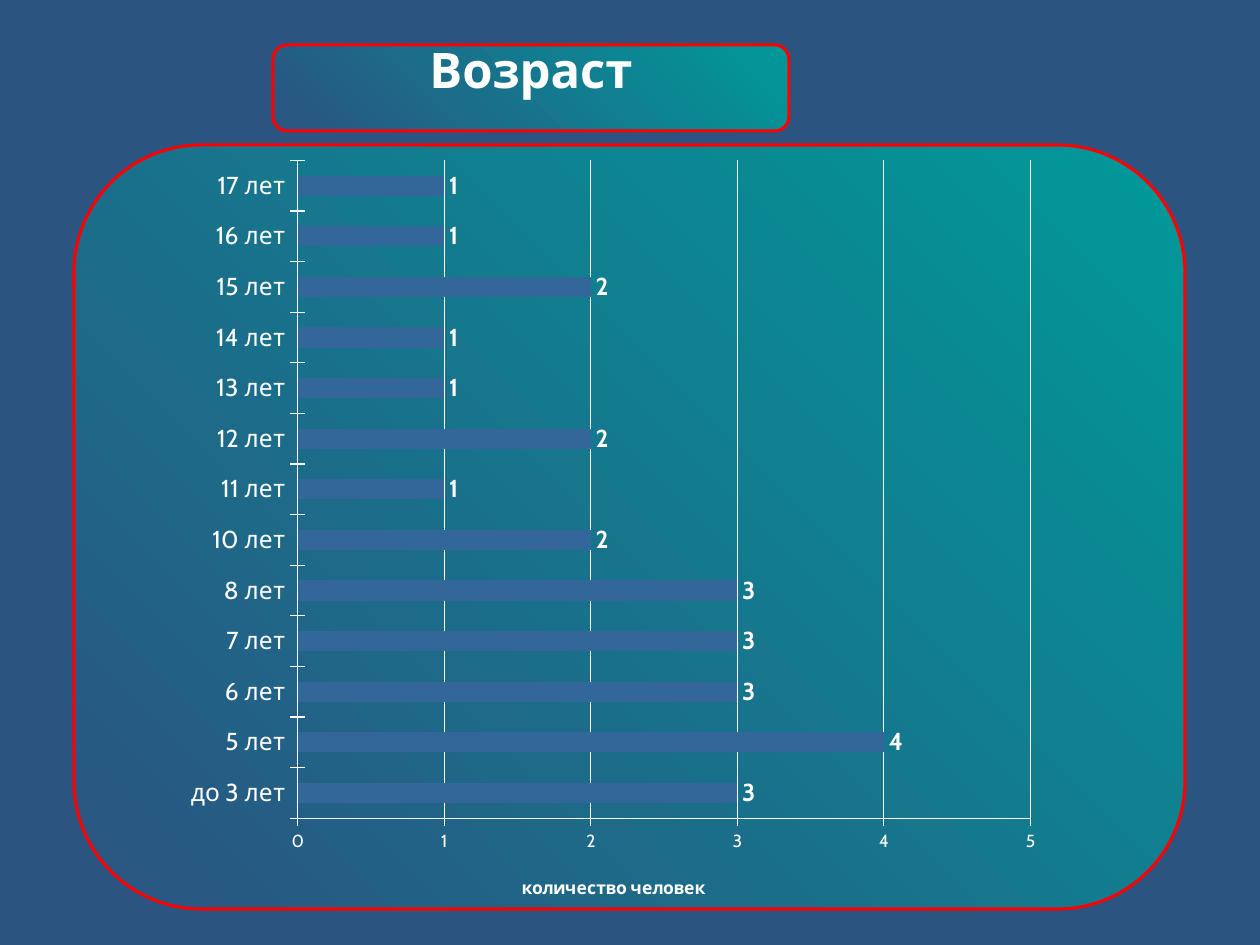
from dataclasses import dataclass

from pptx import Presentation
from pptx.chart.data import CategoryChartData
from pptx.dml.color import RGBColor
from pptx.enum.chart import XL_CHART_TYPE, XL_LABEL_POSITION, XL_TICK_MARK
from pptx.enum.shapes import MSO_SHAPE
from pptx.enum.text import MSO_ANCHOR, PP_ALIGN
from pptx.oxml import parse_xml
from pptx.oxml.ns import nsdecls, qn
from pptx.util import Pt

BAR_CLUSTERED = XL_CHART_TYPE.BAR_CLUSTERED
OUTSIDE_END = XL_LABEL_POSITION.OUTSIDE_END
CROSS = XL_TICK_MARK.CROSS
NO_TICK = XL_TICK_MARK.NONE
ROUNDED = MSO_SHAPE.ROUNDED_RECTANGLE
MIDDLE = MSO_ANCHOR.MIDDLE
CENTER = PP_ALIGN.CENTER

EMU_PER_PX = 914400 / 126


@dataclass(frozen=True)
class Theme:
    navy: str = "2B5481"
    teal: str = "009999"
    bar: str = "336699"
    outline: str = "FF0000"
    white: str = "FFFFFF"
    font: str = "Cabin"
    heading_size: int = 28
    label_size: int = 14
    axis_size: int = 10
    outline_width: float = 1.75
    axis_width: float = 0.75


THEME = Theme()

AGE_COUNTS = {
    "до 3 лет": 3,
    "5 лет": 4,
    "6 лет": 3,
    "7 лет": 3,
    "8 лет": 3,
    "10 лет": 2,
    "11 лет": 1,
    "12 лет": 2,
    "13 лет": 1,
    "14 лет": 1,
    "15 лет": 2,
    "16 лет": 1,
    "17 лет": 1,
}


def px(length):
    return round(length * EMU_PER_PX)


def rgb(value):
    return RGBColor.from_string(value)


def style_font(font, size, bold=False, color=THEME.white):
    font.name = THEME.font
    font.size = Pt(size)
    font.bold = bold
    font.color.rgb = rgb(color)


def write_text(frame, text, size, bold=False, align=CENTER):
    paragraph = frame.paragraphs[0]
    paragraph.alignment = align
    run = paragraph.add_run()
    run.text = text
    style_font(run.font, size, bold)


def add_panel(slide, left, top, width, height):
    panel = slide.shapes.add_shape(ROUNDED, px(left), px(top), px(width), px(height))
    panel.shadow.inherit = False
    panel.fill.gradient()
    panel.fill.gradient_angle = 45
    for stop, color, position in zip(
        panel.fill.gradient_stops, (THEME.navy, THEME.teal), (0, 1)
    ):
        stop.color.rgb = rgb(color)
        stop.position = position
    panel.line.color.rgb = rgb(THEME.outline)
    panel.line.width = Pt(THEME.outline_width)
    return panel


def add_heading(slide, text):
    frame = add_panel(slide, 273, 45, 516, 86).text_frame
    frame.word_wrap = False
    frame.vertical_anchor = MIDDLE
    frame.margin_top = 0
    frame.margin_bottom = px(39)
    write_text(frame, text, THEME.heading_size, bold=True)


def place_part(parent, index, **fractions):
    for previous in parent.findall(qn("c:layout")):
        parent.remove(previous)
    target = '<c:layoutTarget val="inner"/>' if "w" in fractions else ""
    modes = "".join(f'<c:{key}Mode val="edge"/>' for key in ("x", "y"))
    values = "".join(f'<c:{key} val="{value}"/>' for key, value in fractions.items())
    parent.insert(
        index,
        parse_xml(
            f'<c:layout {nsdecls("c")}><c:manualLayout>'
            f"{target}{modes}{values}</c:manualLayout></c:layout>"
        ),
    )


def style_line(line):
    line.color.rgb = rgb(THEME.white)
    line.width = Pt(THEME.axis_width)


def style_axis(axis, size):
    axis.major_tick_mark = CROSS
    axis.minor_tick_mark = NO_TICK
    style_font(axis.tick_labels.font, size)
    style_line(axis.format.line)


def style_value_axis(axis, title):
    style_axis(axis, THEME.axis_size)
    axis.minimum_scale = 0
    axis.maximum_scale = 5
    axis.major_unit = 1
    axis.has_major_gridlines = True
    style_line(axis.major_gridlines.format.line)
    axis.has_title = True
    write_text(axis.axis_title.text_frame, title, THEME.axis_size, bold=True)
    place_part(axis.axis_title._element, 1, x=0.39, y=0.94)


def style_bars(plot):
    plot.gap_width = 150
    plot.vary_by_categories = False
    bars = plot.series[0].format
    bars.fill.solid()
    bars.fill.fore_color.rgb = rgb(THEME.bar)
    plot.has_data_labels = True
    labels = plot.data_labels
    labels.show_value = True
    labels.position = OUTSIDE_END
    style_font(labels.font, THEME.label_size, bold=True)


def add_age_chart(slide):
    ages = CategoryChartData(number_format="General")
    ages.categories = list(AGE_COUNTS)
    ages.add_series("Series 1", list(AGE_COUNTS.values()))
    chart = slide.shapes.add_chart(
        BAR_CLUSTERED, px(174), px(145), px(883), px(774), ages
    ).chart
    chart.has_title = False
    chart.has_legend = False
    style_font(chart.font, THEME.axis_size)
    style_axis(chart.category_axis, THEME.label_size)
    style_value_axis(chart.value_axis, "количество человек")
    style_bars(chart.plots[0])
    place_part(chart._chartSpace.chart.plotArea, 0, x=0.14, y=0.02, w=0.83, h=0.85)


def main():
    deck = Presentation()
    deck.slide_width = px(1260)
    deck.slide_height = px(945)
    slide = deck.slides.add_slide(deck.slide_layouts[6])
    slide.background.fill.solid()
    slide.background.fill.fore_color.rgb = rgb(THEME.navy)
    add_heading(slide, "Возраст")
    add_panel(slide, 74, 145, 1111, 764)
    add_age_chart(slide)
    deck.save("out.pptx")


if __name__ == "__main__":
    main()
